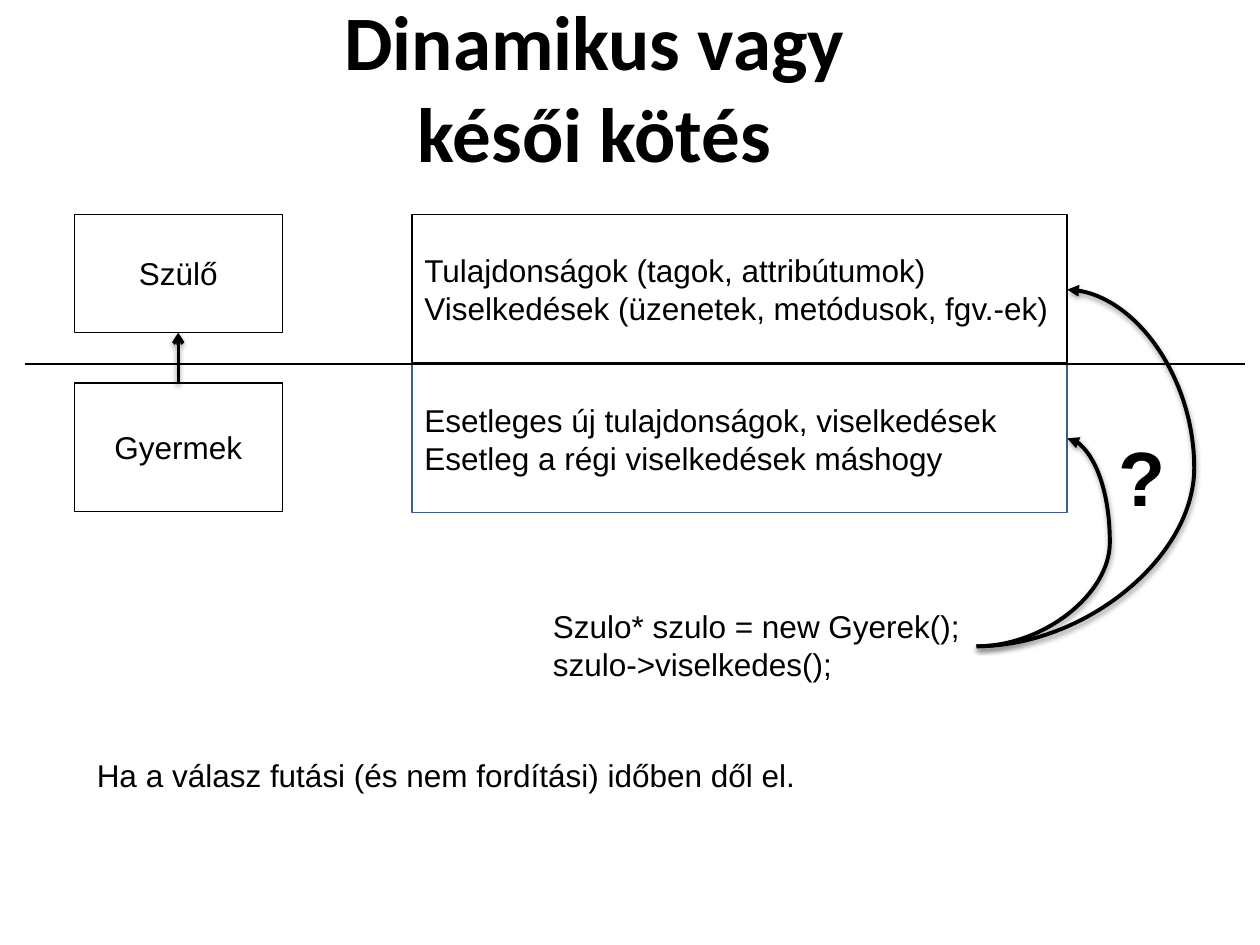
from lxml import etree
from pptx import Presentation
from pptx.dml.color import RGBColor
from pptx.enum import shapes, text
from pptx.oxml import parse_xml
from pptx.oxml.ns import nsdecls, qn
from pptx.util import Inches, Pt

BLACK = RGBColor(0, 0, 0)
WHITE = RGBColor(255, 255, 255)
BLUE = RGBColor(0x3A, 0x5F, 0x8C)
LEFT, MID = text.PP_ALIGN.LEFT, text.PP_ALIGN.CENTER
LINE, CURVE = shapes.MSO_CONNECTOR.STRAIGHT, shapes.MSO_CONNECTOR.CURVE
SHADOW = (
    f'<a:effectLst {nsdecls("a")}>'
    '<a:outerShdw blurRad="40000" dist="20000" dir="5400000" rotWithShape="0">'
    '<a:srgbClr val="000000"><a:alpha val="38000"/></a:srgbClr>'
    '</a:outerShdw></a:effectLst>'
)


def write(frame, paras, size=18, align=LEFT, font="Arial", bold=False):
    """Fill a text frame with evenly styled paragraphs."""
    for i, words in enumerate(paras):
        para = frame.add_paragraph() if i else frame.paragraphs[0]
        para.text = words
        para.alignment = align
        for run in para.runs:
            run.font.size = Pt(size)
            run.font.name = font
            run.font.bold = bold
            run.font.color.rgb = BLACK


def add_title(slide, words):
    """Add the centred heading."""
    box = slide.shapes.add_textbox(Inches(2.32), Inches(-0.03), Inches(4.8), Inches(1.42))
    frame = box.text_frame
    frame.word_wrap = True
    frame.vertical_anchor = text.MSO_ANCHOR.MIDDLE
    write(frame, [words], 44, MID, "Calibri", True)


def add_label(slide, place, words, size=18, bold=False):
    """Add a text box that grows with its words."""
    box = slide.shapes.add_textbox(*map(Inches, place))
    frame = box.text_frame
    frame.word_wrap = False
    frame.auto_size = text.MSO_AUTO_SIZE.SHAPE_TO_FIT_TEXT
    write(frame, [words], size, bold=bold)


def add_box(slide, place, paras, align=LEFT, color=BLACK):
    """Add a white outlined box with text."""
    box = slide.shapes.add_shape(shapes.MSO_SHAPE.RECTANGLE, *map(Inches, place))
    box.shadow.inherit = False
    box.fill.solid()
    box.fill.fore_color.rgb = WHITE
    box.line.color.rgb = color
    box.line.width = Pt(0.75)
    box.text_frame.word_wrap = True
    box.text_frame.vertical_anchor = text.MSO_ANCHOR.MIDDLE
    write(box.text_frame, paras, align=align)
    return box


def add_line(slide, kind, ends, width, head=None):
    """Add a black connector, shadowed when it has an arrowhead."""
    line = slide.shapes.add_connector(kind, *map(Inches, ends))
    line.line.color.rgb = BLACK
    line.line.width = Pt(width)
    props = line._element.spPr
    if head:
        etree.SubElement(props.find(qn("a:ln")), qn("a:tailEnd"), type=head)
        props.append(parse_xml(SHADOW))
    else:
        etree.SubElement(props, qn("a:effectLst"))
    return line


def add_curve(slide, ends, bend):
    """Add a curved arrow that swings out by the given share of its width."""
    line = add_line(slide, CURVE, ends, 2.25, "triangle")
    geom = line._element.spPr.find(qn("a:prstGeom"))
    guides = geom.find(qn("a:avLst"))
    if guides is None:
        guides = etree.SubElement(geom, qn("a:avLst"))
    etree.SubElement(guides, qn("a:gd"), name="adj1", fmla=f"val {round(bend * 100000)}")


def main():
    """Build the slide and save it."""
    deck = Presentation()
    deck.slide_width, deck.slide_height = Inches(10), Inches(7.5)
    slide = deck.slides.add_slide(deck.slide_layouts[6])

    add_title(slide, "Dinamikus vagy késői kötés")
    base = add_box(slide, (0.59, 1.7, 1.65, 0.94), ["Szülő"], MID)
    child = add_box(slide, (0.59, 3.04, 1.65, 1.02), ["Gyermek"], MID)
    arrow = add_line(slide, LINE, (1.42, 3.04, 1.42, 2.64), 2, "arrow")
    arrow.begin_connect(child, 0)
    arrow.end_connect(base, 2)

    add_box(slide, (3.27, 1.7, 5.2, 1.18), [
        "Tulajdonságok (tagok, attribútumok)",
        "Viselkedések (üzenetek, metódusok, fgv.-ek)",
    ])
    add_box(slide, (3.27, 2.89, 5.2, 1.18), [
        "Esetleges új tulajdonságok, viselkedések",
        "Esetleg a régi viselkedések máshogy",
    ], color=BLUE)
    add_line(slide, LINE, (0.2, 2.89, 9.88, 2.89), 0.75)

    add_label(slide, (4.29, 4.77, 3.46, 0.71),
              "Szulo* szulo = new Gyerek();\nszulo->viselkedes();")
    for top, bend in ((2.3, 2.4), (3.48, 1.47)):
        add_curve(slide, (7.75, 5.13, 8.47, top), bend)
    add_label(slide, (8.78, 3.36, 0.58, 0.84), "?", 44, True)
    add_label(slide, (0.67, 5.95, 5.8, 0.4),
              "Ha a válasz futási (és nem fordítási) időben dől el.")
    deck.save("out.pptx")


if __name__ == "__main__":
    main()
